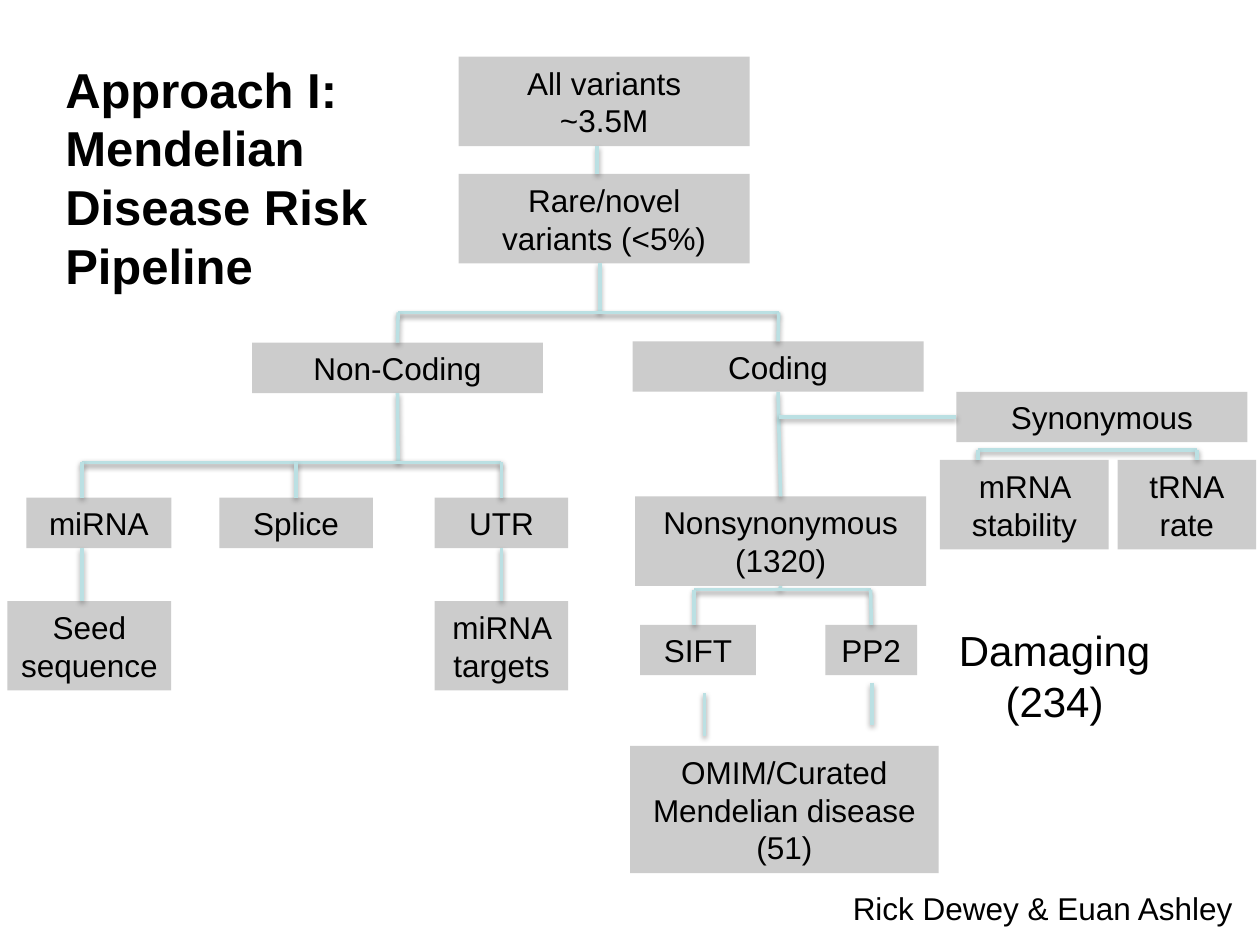
from dataclasses import dataclass

from lxml.etree import SubElement
from pptx import Presentation
from pptx.dml.color import RGBColor
from pptx.enum.shapes import MSO_CONNECTOR, MSO_SHAPE
from pptx.enum.text import MSO_ANCHOR, PP_ALIGN
from pptx.oxml.ns import qn
from pptx.util import Inches, Pt


@dataclass(frozen=True)
class Theme:
    font: str = "Arial"
    text: RGBColor = RGBColor(0x00, 0x00, 0x00)
    box: RGBColor = RGBColor(0xCC, 0xCC, 0xCC)
    line: RGBColor = RGBColor(0xBB, 0xE0, 0xE3)
    title_size: Pt = Pt(28)
    result_size: Pt = Pt(24)
    body_size: Pt = Pt(18)
    line_width: Pt = Pt(2)


theme = Theme()
TOP, LEFT, BOTTOM = 0, 1, 2
ONE_LINE, TWO_LINES, THREE_LINES = 0.4, 0.71, 1.01

presentation = Presentation()
presentation.slide_width = Inches(10)
presentation.slide_height = Inches(7.5)
slide = presentation.slides.add_slide(presentation.slide_layouts[6])


def write_text(shape, text, size, alignment, bold=False):
    text_frame = shape.text_frame
    text_frame.text = text
    for paragraph in text_frame.paragraphs:
        paragraph.alignment = alignment
        paragraph.font.name = theme.font
        paragraph.font.size = size
        paragraph.font.bold = bold
        paragraph.font.color.rgb = theme.text


def add_line(start, end):
    """Each end is a point (x, y) in inches or a (box name, side) pair."""
    points = [(0, 0) if isinstance(place[0], str) else place for place in (start, end)]
    connector = slide.shapes.add_connector(
        MSO_CONNECTOR.STRAIGHT, *[Inches(value) for point in points for value in point])
    for place, connect in ((start, connector.begin_connect), (end, connector.end_connect)):
        if isinstance(place[0], str):
            connect(boxes[place[0]], place[1])
    connector.line.color.rgb = theme.line
    connector.line.width = theme.line_width
    # Soft shadow straight below the line
    effects = SubElement(connector._element.spPr, qn("a:effectLst"))
    shadow = SubElement(effects, qn("a:outerShdw"), blurRad=str(Pt(3.1)),
                        dist=str(Pt(1.6)), dir="5400000", rotWithShape="0")
    color = SubElement(shadow, qn("a:srgbClr"), val=str(theme.text))
    SubElement(color, qn("a:alpha"), val="38000")


# Boxes: name, text, left, top, width, height
boxes = {}
for name, text, left, top, width, height in [
    ("all", "All variants\n~3.5M", 3.64, 0.45, 2.31, TWO_LINES),
    ("rare", "Rare/novel variants (<5%)", 3.64, 1.38, 2.31, TWO_LINES),
    ("non-coding", "Non-Coding", 2, 2.72, 2.31, ONE_LINE),
    ("coding", "Coding", 5.02, 2.71, 2.31, ONE_LINE),
    ("mirna", "miRNA", 0.21, 3.95, 1.15, ONE_LINE),
    ("splice", "Splice", 1.74, 3.95, 1.22, ONE_LINE),
    ("utr", "UTR", 3.45, 3.95, 1.06, ONE_LINE),
    ("seed", "Seed\nsequence", 0.06, 4.77, 1.3, TWO_LINES),
    ("targets", "miRNA targets", 3.45, 4.77, 1.06, TWO_LINES),
    ("synonymous", "Synonymous", 7.59, 3.11, 2.31, ONE_LINE),
    ("mrna", "mRNA stability", 7.46, 3.65, 1.34, TWO_LINES),
    ("trna", "tRNA\nrate", 8.87, 3.65, 1.1, TWO_LINES),
    ("nonsynonymous", "Nonsynonymous\n(1320)", 5.04, 3.94, 2.31, TWO_LINES),
    ("sift", "SIFT", 5.08, 4.96, 0.92, ONE_LINE),
    ("pp2", "PP2", 6.55, 4.96, 0.73, ONE_LINE),
    ("omim", "OMIM/Curated Mendelian disease\n(51)", 5, 5.92, 2.45, THREE_LINES),
]:
    box = slide.shapes.add_shape(
        MSO_SHAPE.RECTANGLE, Inches(left), Inches(top), Inches(width), Inches(height))
    box.shadow.inherit = False
    box.fill.solid()
    box.fill.fore_color.rgb = theme.box
    box.line.fill.background()
    write_text(box, text, theme.body_size, PP_ALIGN.CENTER)
    boxes[name] = box

# Lines of the tree, from the top down
for start, end in [
    # All variants to the coding split
    ((4.74, 1.16), (4.74, 1.38)),
    ((4.76, 2.09), (4.76, 2.48)),
    ((3.16, 2.48), (6.18, 2.48)),
    ((3.16, 2.48), ("non-coding", TOP)),
    ((6.18, 2.48), ("coding", TOP)),
    # Non-coding branch
    (("non-coding", BOTTOM), (3.16, 3.67)),
    ((0.65, 3.67), (3.98, 3.67)),
    ((0.65, 3.67), (0.65, 3.95)),
    ((2.35, 3.67), ("splice", TOP)),
    ((3.98, 3.67), ("utr", TOP)),
    ((0.65, 4.35), (0.65, 4.77)),
    (("utr", BOTTOM), ("targets", TOP)),
    # Coding branch
    (("coding", BOTTOM), ("nonsynonymous", TOP)),
    ((6.18, 3.31), ("synonymous", LEFT)),
    ((7.76, 3.57), (9.5, 3.57)),
    ((7.76, 3.57), (7.76, 3.65)),
    ((9.5, 3.57), (9.5, 3.65)),
    # Nonsynonymous to the disease variants
    (("nonsynonymous", BOTTOM), (6.19, 4.68)),
    ((5.51, 4.68), (6.91, 4.68)),
    ((5.51, 4.68), (5.51, 4.96)),
    ((6.91, 4.68), ("pp2", TOP)),
    ((5.59, 5.5), (5.59, 5.84)),
    ((6.92, 5.42), (6.92, 5.75)),
]:
    add_line(start, end)

# Title, result and credit
for text, left, top, width, height, size, alignment, bold, wrap in [
    ("Approach I: Mendelian Disease Risk Pipeline", 0.42, 0.42, 3, 1.99,
     theme.title_size, PP_ALIGN.LEFT, True, True),
    ("Damaging\n(234)", 7.5, 4.91, 1.74, 1.31,
     theme.result_size, PP_ALIGN.CENTER, False, False),
    ("Rick Dewey & Euan Ashley", 6.67, 7.01, 3.5, 0.4,
     theme.body_size, PP_ALIGN.LEFT, False, True),
]:
    label = slide.shapes.add_textbox(
        Inches(left), Inches(top), Inches(width), Inches(height))
    label.text_frame.word_wrap = wrap
    label.text_frame.vertical_anchor = MSO_ANCHOR.TOP
    write_text(label, text, size, alignment, bold)

presentation.save("out.pptx")
